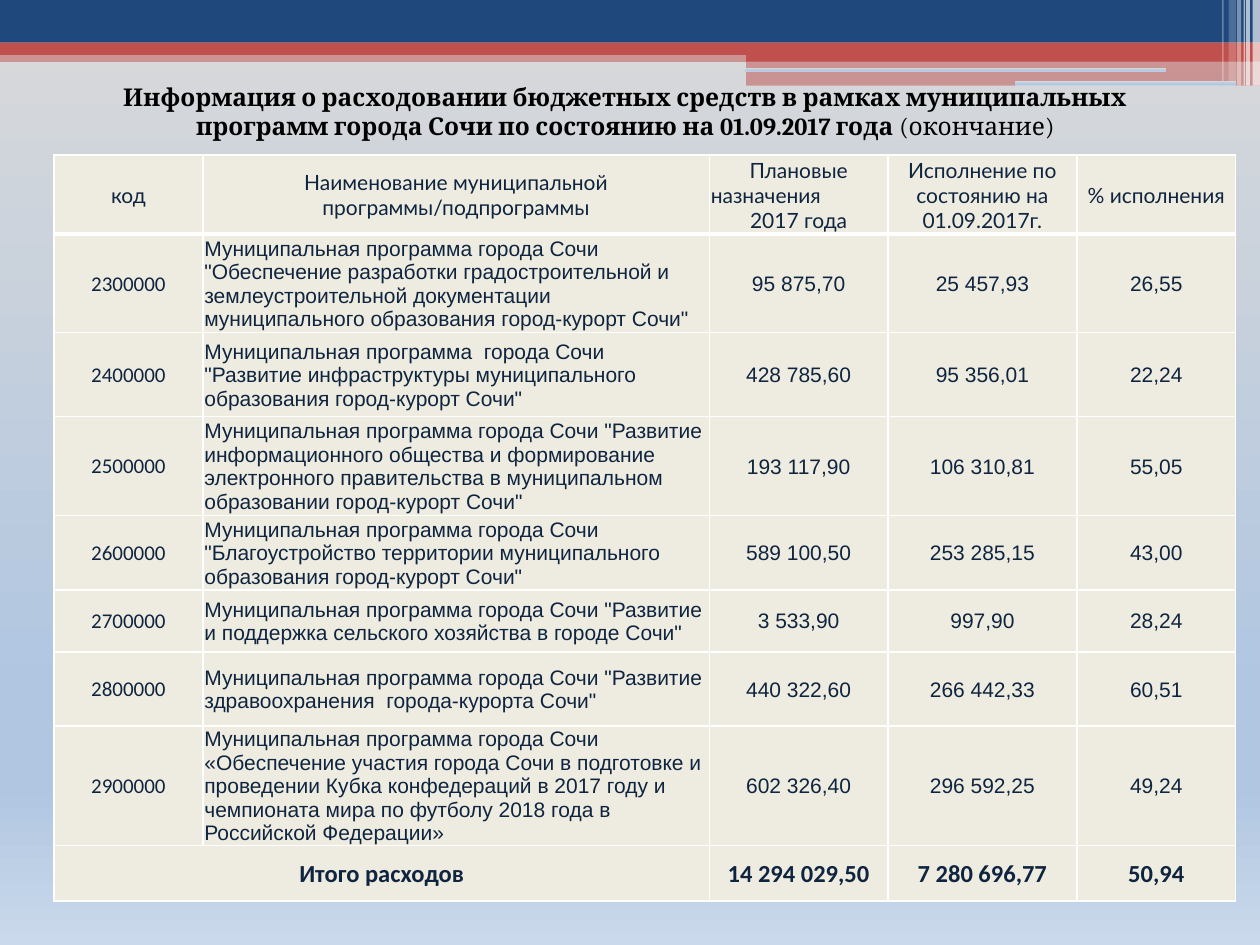
from lxml.etree import SubElement
from pptx import Presentation
from pptx.dml.color import RGBColor
from pptx.enum.shapes import MSO_SHAPE as Shape
from pptx.enum.text import MSO_ANCHOR as Anchor, MSO_AUTO_SIZE as AutoSize, PP_ALIGN as Align
from pptx.oxml.ns import qn
from pptx.util import Cm, Pt

NAVY, RED, WHITE, CREAM, INK = "1F497D", "C0504D", "FFFFFF", "EEECE1", "0F243E"
GRADIENT = [(0, "D9D9D9"), (74, "B0C6E1"), (83, "B0C6E1"), (100, "CAD9EB")]

COLUMN_WIDTHS = [3, 10.21, 3.6, 3.81, 3.2]
ROW_HEIGHTS = [1.6, 1.98, 1.7, 1.99, 1.5, 1.25, 1.5, 2.4, 1.12]
ROWS = [
    ["код", "Наименование муниципальной программы/подпрограммы",
     "Плановые\nназначения\n2017 года", "Исполнение по состоянию на 01.09.2017г.",
     "% исполнения"],
    ["2300000", 'Муниципальная программа города Сочи "Обеспечение разработки '
     'градостроительной и землеустроительной документации муниципального '
     'образования город-курорт Сочи"', "95 875,70", "25 457,93", "26,55"],
    ["2400000", 'Муниципальная программа  города Сочи "Развитие инфраструктуры '
     'муниципального образования город-курорт Сочи"',
     "428 785,60", "95 356,01", "22,24"],
    ["2500000", 'Муниципальная программа города Сочи "Развитие информационного '
     'общества и формирование электронного правительства в муниципальном '
     'образовании город-курорт Сочи"', "193 117,90", "106 310,81", "55,05"],
    ["2600000", 'Муниципальная программа города Сочи "Благоустройство территории '
     'муниципального образования город-курорт Сочи"',
     "589 100,50", "253 285,15", "43,00"],
    ["2700000", 'Муниципальная программа города Сочи "Развитие и поддержка '
     'сельского хозяйства в городе Сочи"', "3 533,90", "997,90", "28,24"],
    ["2800000", 'Муниципальная программа города Сочи "Развитие здравоохранения  '
     'города-курорта Сочи"', "440 322,60", "266 442,33", "60,51"],
    ["2900000", "Муниципальная программа города Сочи «Обеспечение участия города "
     "Сочи в подготовке и проведении Кубка конфедераций в 2017 году и чемпионата "
     "мира по футболу 2018 года в Российской Федерации»",
     "602 326,40", "296 592,25", "49,24"],
    ["Итого расходов", "", "14 294 029,50", "7 280 696,77", "50,94"],
]


def color(hex_value):
    return RGBColor.from_string(hex_value)


def fill_gradient(fill, element):
    fill.gradient()
    fill.gradient_angle = 270
    stops = element.find(".//" + qn("a:gsLst"))
    for stop in list(stops):
        stops.remove(stop)
    for position, hex_value in GRADIENT:
        stop = SubElement(stops, qn("a:gs"), pos=str(position * 1000))
        SubElement(stop, qn("a:srgbClr"), val=hex_value)


def add_bar(slide, box, hex_value=None, opacity=100):
    preset = Shape.RECTANGLE if hex_value else Shape.ROUNDED_RECTANGLE
    shape = slide.shapes.add_shape(preset, *map(Cm, box))
    shape.shadow.inherit = False
    shape.line.fill.background()
    if hex_value is None:
        fill_gradient(shape.fill, shape.element)
        return
    shape.fill.solid()
    shape.fill.fore_color.rgb = color(hex_value)
    if opacity < 100:
        solid = shape.element.spPr.find(qn("a:solidFill"))
        SubElement(solid[0], qn("a:alpha"), val=str(opacity * 1000))


def add_header_band(slide, left, top, width):
    middle = left + 15.04
    right = left + width
    for x, y, height, hex_value, opacity in [
        (left, 1.02, 0.23, RED, 50), (left, 0, 0.86, NAVY, 100),
        (left, 0.86, 0.25, RED, 100), (middle, 0.99, 0.25, RED, 100),
        (middle, 1.22, 0.51, RED, 50),
    ]:
        add_bar(slide, (x, top + y, right - x, height), hex_value, opacity)
    add_bar(slide, (left + 15.01, top + 1.37, 8.51, 0.08))
    add_bar(slide, (left + 20.47, top + 1.63, 4.45, 0.1))
    for offset, stripe_width, height, opacity in [
        (0.15, 0.15, 1.73, 65), (0.28, 0.08, 1.73, 65), (0.33, 0.03, 1.73, 60),
        (0.46, 0.08, 1.73, 40), (0.63, 0.15, 1.63, 20), (0.76, 0.03, 1.63, 30),
    ]:
        add_bar(slide, (right - offset, top, stripe_width, height), WHITE, opacity)


def add_run(paragraph, text, font_name, size, hex_value, bold=False):
    run = paragraph.add_run()
    run.text = text
    run.font.name = font_name
    run.font.size = Pt(size)
    run.font.bold = bold
    run.font.color.rgb = color(hex_value)


def add_title(slide, left, top, width, height):
    title = slide.shapes.title
    title.left, title.top, title.width, title.height = map(Cm, (left, top, width, height))
    title.element.getparent().append(title.element)
    frame = title.text_frame
    frame.word_wrap = True
    frame.auto_size = AutoSize.NONE
    frame.vertical_anchor = Anchor.TOP
    paragraph = frame.paragraphs[0]
    paragraph.alignment = Align.CENTER
    add_run(paragraph, "Информация о расходовании бюджетных средств в рамках "
            "муниципальных программ города Сочи по состоянию на 01.09.2017 года ",
            "Cambria", 14, "000000", True)
    add_run(paragraph, "(окончание)", "Cambria", 14, "000000")


def set_borders(cell, top, bottom):
    properties = cell._tc.get_or_add_tcPr()
    for side, points in (("L", 1), ("R", 1), ("T", top), ("B", bottom)):
        line = SubElement(properties, qn("a:ln" + side), w=str(Pt(points)))
        solid = SubElement(line, qn("a:solidFill"))
        SubElement(solid, qn("a:srgbClr"), val=WHITE)


def fill_cell(cell, text, font_name, size, bold, alignment):
    cell.fill.solid()
    cell.fill.fore_color.rgb = color(CREAM)
    cell.vertical_anchor = Anchor.MIDDLE
    cell.margin_left = cell.margin_right = cell.margin_top = Cm(0.03)
    cell.margin_bottom = 0
    frame = cell.text_frame
    for index, line in enumerate(text.split("\n")):
        paragraph = frame.add_paragraph() if index else frame.paragraphs[0]
        paragraph.alignment = Align.LEFT if index == 1 else alignment
        if line:
            add_run(paragraph, line, font_name, size, INK, bold)


def add_budget_table(slide, left, top):
    table = slide.shapes.add_table(
        len(ROWS), len(COLUMN_WIDTHS), Cm(left), Cm(top),
        Cm(sum(COLUMN_WIDTHS)), Cm(sum(ROW_HEIGHTS))).table
    table.first_row = table.horz_banding = False
    for column, width in zip(table.columns, COLUMN_WIDTHS):
        column.width = Cm(width)
    for row, height in zip(table.rows, ROW_HEIGHTS):
        row.height = Cm(height)
    last = len(ROWS) - 1
    table.cell(last, 0).merge(table.cell(last, 1))
    for row_index, values in enumerate(ROWS):
        is_header, is_total = row_index == 0, row_index == last
        for column_index, text in enumerate(values):
            cell = table.cell(row_index, column_index)
            set_borders(cell, 3 if row_index == 1 else 1, 3 if is_header else 1)
            if is_header:
                font_name = "Lato"
            else:
                font_name = "Calibri" if is_total or column_index == 0 else "Arial"
            is_name = column_index == 1 and not is_header
            fill_cell(cell, text, font_name, 14 if is_total else 12, is_total,
                      Align.LEFT if is_name else Align.CENTER)


def main():
    presentation = Presentation()
    presentation.slide_width, presentation.slide_height = Cm(25.4), Cm(19.05)
    slide = presentation.slides.add_slide(presentation.slide_layouts[5])
    fill_gradient(slide.background.fill, slide.element)
    add_header_band(slide, 0, 0, 25.4)
    add_budget_table(slide, 1.09, 3.12)
    add_title(slide, 1.3, 1.52, 22.61, 1.45)
    presentation.save("out.pptx")


if __name__ == "__main__":
    main()
